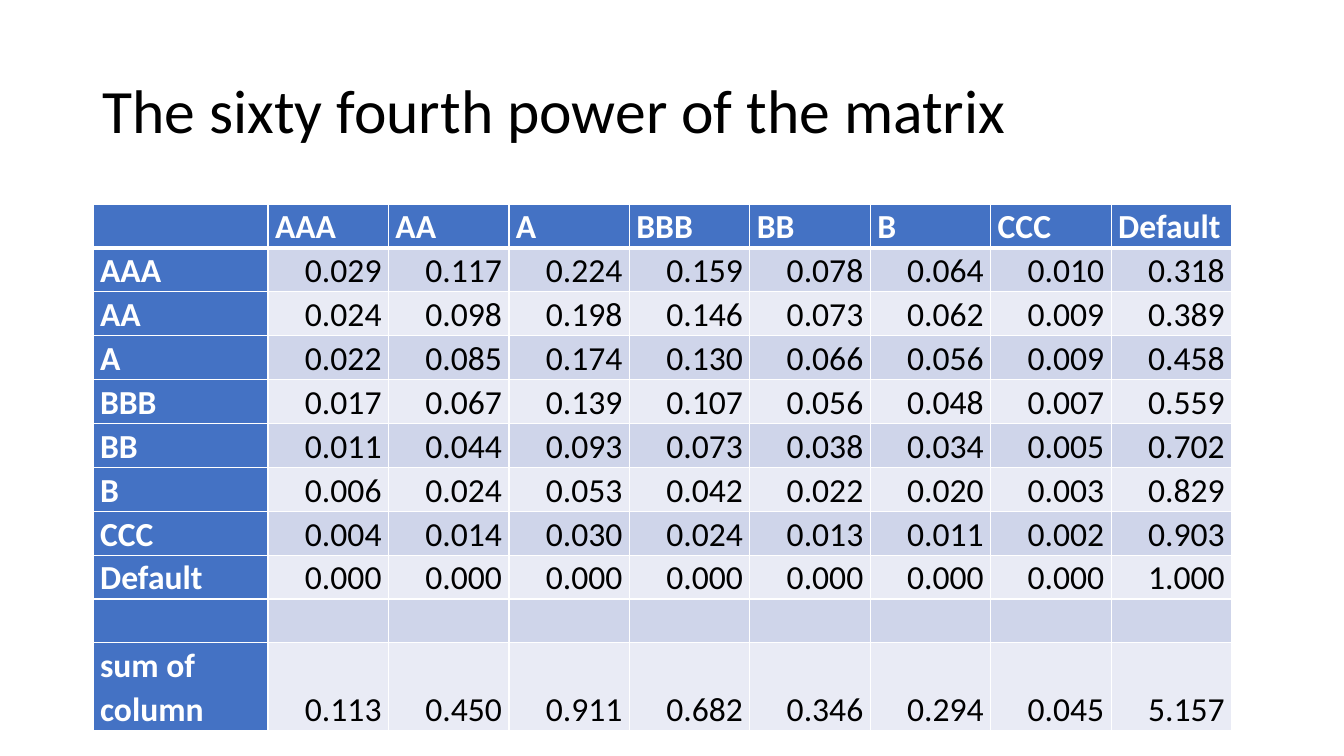
"""Build a slide with the sixty fourth power of a rating matrix."""
import pptx
import pptx.dml.color
import pptx.enum.text
import pptx.oxml
import pptx.oxml.ns
import pptx.util

Pt = pptx.util.Pt
RGB = pptx.dml.color.RGBColor.from_string
Align = pptx.enum.text.PP_ALIGN
Anchor = pptx.enum.text.MSO_ANCHOR

HUES = {"head": "4472C4", "odd": "CFD5EA", "even": "E9EBF5",
        "light": "FFFFFF", "dark": "000000"}
RATES = ["AAA", "AA", "A", "BBB", "BB", "B", "CCC", "Default"]
ROWS = [
    ["", *RATES],
    ["AAA", "0.029", "0.117", "0.224", "0.159", "0.078", "0.064", "0.010", "0.318"],
    ["AA", "0.024", "0.098", "0.198", "0.146", "0.073", "0.062", "0.009", "0.389"],
    ["A", "0.022", "0.085", "0.174", "0.130", "0.066", "0.056", "0.009", "0.458"],
    ["BBB", "0.017", "0.067", "0.139", "0.107", "0.056", "0.048", "0.007", "0.559"],
    ["BB", "0.011", "0.044", "0.093", "0.073", "0.038", "0.034", "0.005", "0.702"],
    ["B", "0.006", "0.024", "0.053", "0.042", "0.022", "0.020", "0.003", "0.829"],
    ["CCC", "0.004", "0.014", "0.030", "0.024", "0.013", "0.011", "0.002", "0.903"],
    ["Default", *["0.000"] * 7, "1.000"],
    [""] * 9,
    ["sum of column", "0.113", "0.450", "0.911", "0.682", "0.346", "0.294", "0.045", "5.157"],
]


def add_run(para, text, size, hue, bold=False):
    run = para.add_run()
    run.text = text
    run.font.name = "Calibri"
    run.font.size = Pt(size)
    run.font.bold = bold
    run.font.color.rgb = RGB(HUES[hue])


def add_edge(cell, side, width):
    edge = pptx.oxml.parse_xml(
        f'<a:ln{side} {pptx.oxml.ns.nsdecls("a")} w="{Pt(width)}"><a:solidFill>'
        f'<a:srgbClr val="{HUES["light"]}"/></a:solidFill></a:ln{side}>')
    props = cell._tc.get_or_add_tcPr()
    props.insert("LRTB".index(side), edge)


deck = pptx.Presentation()
deck.slide_width, deck.slide_height = Pt(960), Pt(540)
slide = deck.slides.add_slide(deck.slide_layouts[5])

title = slide.shapes.title
title.left, title.top, title.width, title.height = Pt(66), Pt(28.75), Pt(828), Pt(104.4)
frame = title.text_frame
frame.auto_size = pptx.enum.text.MSO_AUTO_SIZE.NONE
frame.word_wrap = True
frame.vertical_anchor = Anchor.MIDDLE
para = frame.paragraphs[0]
para.alignment = Align.LEFT
para.line_spacing = 0.9
add_run(para, "The sixty fourth power of the matrix", 44, "dark")

table = slide.shapes.add_table(
    len(ROWS), len(ROWS[0]), Pt(66.5), Pt(145.75), Pt(813.4), Pt(368)).table
for c, col in enumerate(table.columns):
    col.width = Pt(86.05 if c else 125)
for r, row in enumerate(table.rows):
    row.height = Pt(58 if r == len(ROWS) - 1 else 31)

for r, row in enumerate(ROWS):
    for c, text in enumerate(row):
        cell = table.cell(r, c)
        head = r == 0 or c == 0
        cell.fill.solid()
        cell.fill.fore_color.rgb = RGB(HUES["head" if head else "odd" if r % 2 else "even"])
        for side in "LRTB":
            thick = (r, side) in [(0, "B"), (1, "T")]
            add_edge(cell, side, 3 if thick else 1)
        cell.margin_left = cell.margin_right = Pt(5)
        cell.margin_top = cell.margin_bottom = Pt(0)
        cell.vertical_anchor = Anchor.BOTTOM
        if text:
            para = cell.text_frame.paragraphs[0]
            para.alignment = Align.LEFT if head else Align.RIGHT
            para.line_spacing = 1.07
            para.space_after = Pt(8)
            add_run(para, text, 24, "light" if head else "dark", head)

deck.save("out.pptx")
